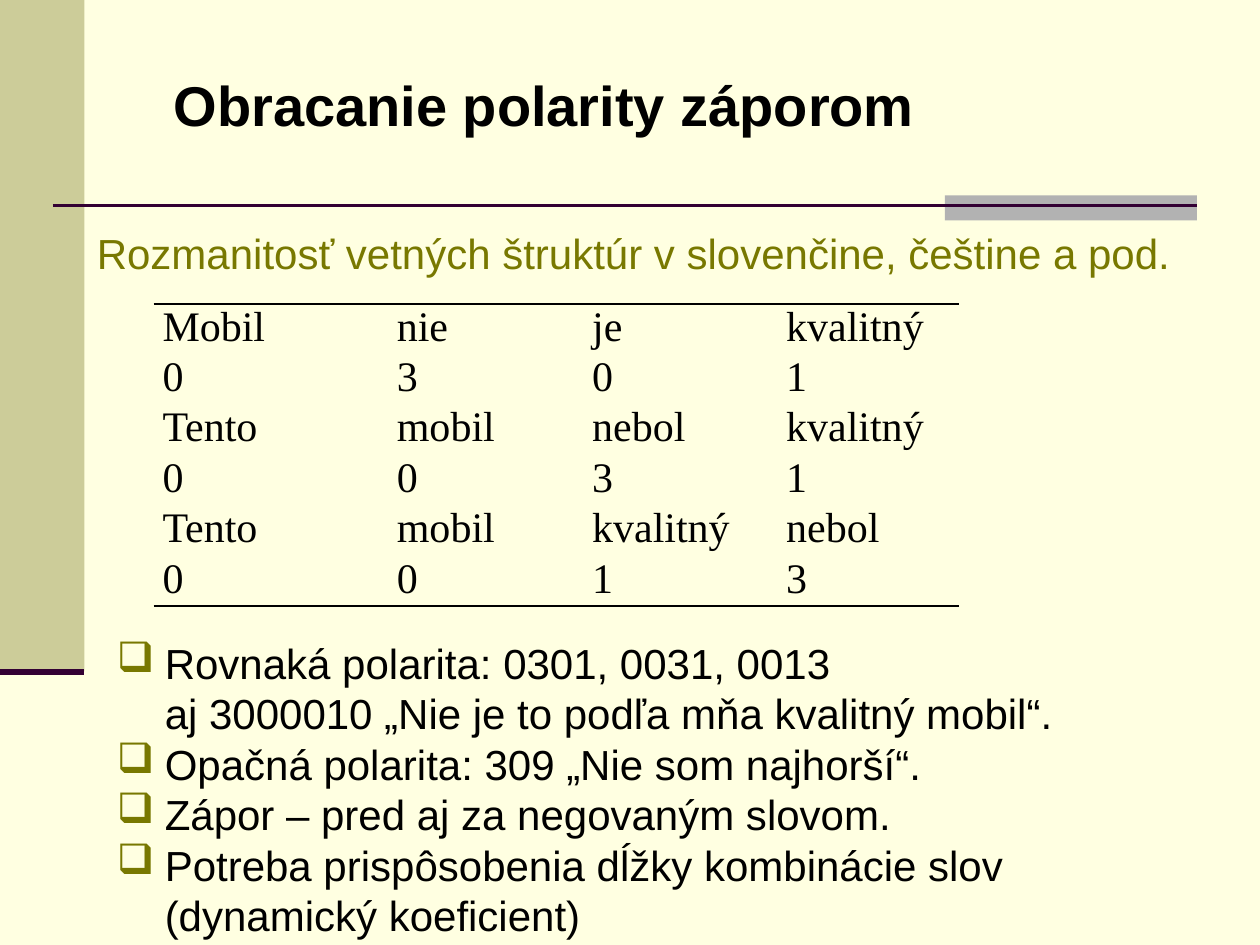
from pptx import Presentation
from pptx.dml.color import RGBColor
from pptx.enum.shapes import MSO_CONNECTOR, MSO_SHAPE
from pptx.enum.text import MSO_AUTO_SIZE
from pptx.oxml.ns import qn
from pptx.util import Inches, Pt
from lxml.etree import SubElement

CREAM, SAND, SILVER = "FFFFE1", "CCCC99", "B2B2B2"
PLUM, OLIVE, BLACK = "330033", "787800", "000000"
NO_TABLE_STYLE = "{2D5ABB26-0587-4C30-8999-92F81FD0307C}"
HANGING = 0.38

SENTENCES = [
    ["Mobil", "nie", "je", "kvalitný"],
    ["0", "3", "0", "1"],
    ["Tento", "mobil", "nebol", "kvalitný"],
    ["0", "0", "3", "1"],
    ["Tento", "mobil", "kvalitný", "nebol"],
    ["0", "0", "1", "3"],
]
# (has a bullet, text)
FINDINGS = [
    (True, "Rovnaká polarita: 0301, 0031, 0013"),
    (False, "aj 3000010 „Nie je to podľa mňa kvalitný mobil“."),
    (True, "Opačná polarita: 309 „Nie som najhorší“."),
    (True, "Zápor – pred aj za negovaným slovom."),
    (True, "Potreba prispôsobenia dĺžky kombinácie slov (dynamický koeficient)"),
]


def rgb(color):
    return RGBColor.from_string(color)


def add_block(slide, left, top, width, height, color):
    block = slide.shapes.add_shape(MSO_SHAPE.RECTANGLE, Inches(left), Inches(top),
                                   Inches(width), Inches(height))
    block.shadow.inherit = False
    block.fill.solid()
    block.fill.fore_color.rgb = rgb(color)
    block.line.fill.background()


def add_rule(slide, left, right, y, weight):
    rule = slide.shapes.add_connector(MSO_CONNECTOR.STRAIGHT, Inches(left), Inches(y),
                                      Inches(right), Inches(y))
    rule.line.color.rgb = rgb(PLUM)
    rule.line.width = Pt(weight)
    SubElement(rule.element.spPr, qn("a:effectLst"))


def style_text(paragraph, size, color, font="Arial", bold=False):
    for run in paragraph.runs:
        run.font.name = font
        run.font.size = Pt(size)
        run.font.bold = bold
        run.font.color.rgb = rgb(color)


def add_text(slide, left, top, width, height, lines, size=24, color=BLACK,
             bold=False, wrap=True):
    frame = slide.shapes.add_textbox(Inches(left), Inches(top),
                                     Inches(width), Inches(height)).text_frame
    frame.word_wrap = wrap
    frame.auto_size = MSO_AUTO_SIZE.SHAPE_TO_FIT_TEXT
    frame.text = "\n".join(lines)
    for paragraph in frame.paragraphs:
        style_text(paragraph, size, color, bold=bold)
    return frame.paragraphs


def indent(paragraph, first_line):
    properties = paragraph._p.get_or_add_pPr()
    properties.set("marL", str(Inches(HANGING)))
    properties.set("indent", str(Inches(first_line)))
    return properties


def add_bullet(properties):
    bullet_color = SubElement(properties, qn("a:buClr"))
    SubElement(bullet_color, qn("a:srgbClr"), val=OLIVE)
    SubElement(properties, qn("a:buChar"), char="❑")


def add_border(cell, side):
    """Draw a black border; side is the XML tag, such as a:lnT."""
    properties = cell._tc.get_or_add_tcPr()
    border = SubElement(properties, qn(side), w=str(Pt(1.5)))
    fill = SubElement(border, qn("a:solidFill"))
    SubElement(fill, qn("a:srgbClr"), val=BLACK)
    properties.insert(0, border)


def add_sentence_table(slide, left, top, column_widths, row_height):
    last_row = len(SENTENCES) - 1
    holder = slide.shapes.add_table(
        len(SENTENCES), len(column_widths), Inches(left), Inches(top),
        Inches(sum(column_widths)), Inches(row_height * len(SENTENCES)))
    table = holder.table
    table.first_row = table.horz_banding = False
    for style in holder.element.iter(qn("a:tableStyleId")):
        style.text = NO_TABLE_STYLE
    for column, width in zip(table.columns, column_widths):
        column.width = Inches(width)
    for r, words in enumerate(SENTENCES):
        table.rows[r].height = Inches(row_height)
        for c, word in enumerate(words):
            cell = table.cell(r, c)
            cell.margin_left = cell.margin_right = Inches(0.07)
            cell.margin_top = cell.margin_bottom = 0
            cell.fill.background()
            cell.text_frame.text = word
            style_text(cell.text_frame.paragraphs[0], 24, BLACK, "Times New Roman")
            if r == 0:
                add_border(cell, "a:lnT")
            if r == last_row:
                add_border(cell, "a:lnB")


def main():
    deck = Presentation()
    deck.slide_width, deck.slide_height = Inches(10), Inches(7.5)
    slide = deck.slides.add_slide(deck.slide_layouts[6])
    slide.background.fill.solid()
    slide.background.fill.fore_color.rgb = rgb(CREAM)

    add_block(slide, 0, 0, 0.67, 5.33, SAND)
    add_block(slide, 7.5, 1.55, 2, 0.2, SILVER)
    add_rule(slide, 0.42, 9.5, 1.63, 1.5)
    add_rule(slide, 0, 0.67, 5.33, 3.5)

    add_text(slide, 1.28, 0.51, 6.5, 0.64, ["Obracanie polarity záporom"],
             size=32, bold=True, wrap=False)
    subtitle = add_text(slide, 0.67, 1.76, 8.74, 0.51,
                        ["Rozmanitosť vetných štruktúr v slovenčine, češtine a pod."],
                        color=OLIVE)
    indent(subtitle[0], -HANGING)

    add_sentence_table(slide, 1.22, 2.41, [1.86, 1.55, 1.54, 1.44], 0.4)

    findings = add_text(slide, 0.83, 5.01, 8.74, 2.52, [text for _, text in FINDINGS])
    for paragraph, (bulleted, _) in zip(findings, FINDINGS):
        properties = indent(paragraph, -HANGING if bulleted else 0)
        if bulleted:
            add_bullet(properties)

    deck.save("out.pptx")


if __name__ == "__main__":
    main()
